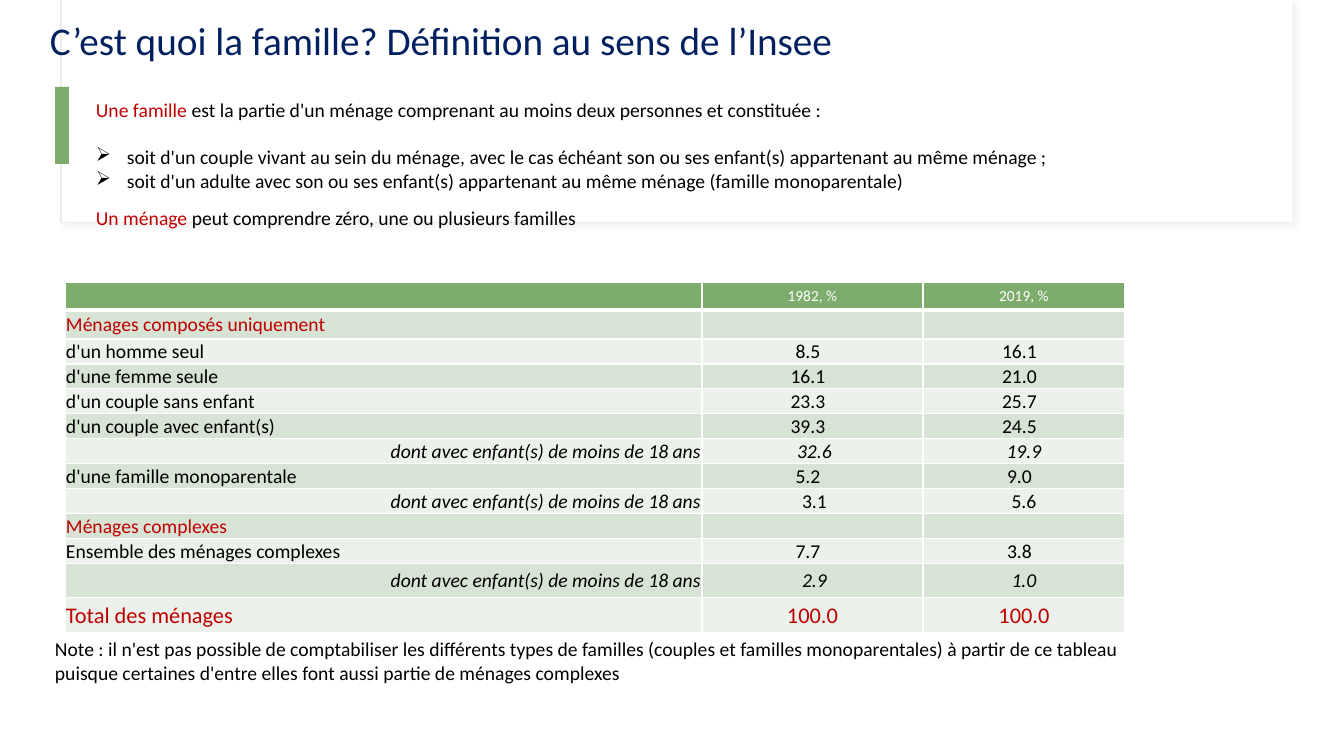
from lxml import etree
from pptx import Presentation
from pptx.dml.color import RGBColor
from pptx.enum.shapes import MSO_SHAPE
from pptx.enum.text import MSO_ANCHOR, PP_ALIGN
from pptx.oxml import parse_xml
from pptx.oxml.ns import nsdecls, qn
from pptx.util import Emu, Pt

RECT = MSO_SHAPE.RECTANGLE
MIDDLE = MSO_ANCHOR.MIDDLE
LEFT, CENTER, RIGHT = PP_ALIGN.LEFT, PP_ALIGN.CENTER, PP_ALIGN.RIGHT
SCALE = 914400 / 100.8  # EMU in one px
FONT = "Calibri"
INK = {
    "white": "FFFFFF", "black": "000000", "navy": "002060", "red": "C00000",
    "green": "7DAC6C", "dark": "D7E3D4", "light": "ECF1EB",
    "edge": "F0EBE4", "shade": "D9D9D9",
}
SUB = "dont avec enfant(s) de moins de 18 ans"
# label, 1982, 2019, style of the row
ROWS = [
    ("", "1982, %", "2019, %", "head"),
    ("Ménages composés uniquement", "", "", "group"),
    ("d'un homme seul", "8.5", "16.1", "main"),
    ("d'une femme seule", "16.1", "21.0", "main"),
    ("d'un couple sans enfant", "23.3", "25.7", "main"),
    ("d'un couple avec enfant(s)", "39.3", "24.5", "main"),
    (SUB, "32.6", "19.9", "sub"),
    ("d'une famille monoparentale", "5.2", "9.0", "main"),
    (SUB, "3.1", "5.6", "plain"),
    ("Ménages complexes", "", "", "group"),
    ("Ensemble des ménages complexes", "7.7", "3.8", "main"),
    (SUB, "2.9", "1.0", "sub"),
    ("Total des ménages", "100.0", "100.0", "total"),
]
TALL = [28, 29] + [25] * 9 + [34, 35]
WIDE = [637, 221, 202]
STYLES = {
    "head": {"size": 11, "color": "white"},
    "group": {"color": "red"},
    "main": {},
    "sub": {"italic": True},
    "plain": {},
    "total": {"size": 16, "color": "red"},
}


def px(n):
    return Emu(round(n * SCALE))


def rgb(name):
    return RGBColor.from_string(INK[name])


def write(para, text, size=14, color="black", italic=False, align=LEFT):
    para.alignment = align
    para.font.size = Pt(size)
    if text:
        run = para.add_run()
        run.text = text
        font = run.font
        font.name, font.size, font.italic = FONT, Pt(size), italic
        font.color.rgb = rgb(color)


def block(slide, box, fill, line=None):
    shape = slide.shapes.add_shape(RECT, *map(px, box))
    shape.shadow.inherit = False
    shape.fill.solid()
    shape.fill.fore_color.rgb = rgb(fill)
    if line:
        shape.line.color.rgb = rgb(line)
        shape.line.width = Pt(0.75)
    else:
        shape.line.fill.background()
    return shape


def frame(slide, box):
    text = slide.shapes.add_textbox(*map(px, box)).text_frame
    text.word_wrap = True
    return text


def panel(slide, box):
    x, y, w, h = box
    # Framed card with a soft shadow
    card = block(slide, box, "white", "edge")
    glow = card._element.spPr.find(qn("a:effectLst"))
    glow.append(parse_xml(
        f'<a:outerShdw {nsdecls("a")} blurRad="50800" dist="38100" dir="2700000">'
        f'<a:srgbClr val="{INK["shade"]}"><a:alpha val="30000"/></a:srgbClr>'
        '</a:outerShdw>'))
    block(slide, (x + 1, y, w - 1, h - 1), "white")
    # Green marker
    block(slide, (x - 6, y + 87, 14, 77), "green")


def bullet(para):
    props = para._p.get_or_add_pPr()
    props.set("marL", str(px(31)))
    props.set("indent", str(px(-31)))
    etree.SubElement(props, qn("a:buFont")).set("typeface", "Wingdings")
    etree.SubElement(props, qn("a:buChar")).set("char", "Ø")


def define(slide, box):
    text = frame(slide, box)
    first = text.paragraphs[0]
    write(first, "Une famille ", color="red")
    write(first, "est la partie d'un ménage comprenant au moins deux personnes et constituée :")
    first.space_after = Pt(17)
    for line in (
        "soit d'un couple vivant au sein du ménage, avec le cas échéant son ou ses enfant(s) appartenant au même ménage ;",
        "soit d'un adulte avec son ou ses enfant(s) appartenant au même ménage (famille monoparentale)",
    ):
        item = text.add_paragraph()
        write(item, line)
        bullet(item)
    last = text.add_paragraph()
    last.space_before = Pt(10)
    write(last, "Un ménage ", color="red")
    write(last, "peut comprendre zéro, une ou plusieurs familles")


def border(cell, base):
    props = cell._tc.get_or_add_tcPr()
    for side, wide in (("L", 1), ("R", 1), ("T", 1), ("B", base)):
        props.append(parse_xml(
            f'<a:ln{side} {nsdecls("a")} w="{Pt(wide)}"><a:solidFill>'
            f'<a:srgbClr val="{INK["white"]}"/></a:solidFill></a:ln{side}>'))


def shares(slide, box):
    grid = slide.shapes.add_table(len(ROWS), len(WIDE), *map(px, box)).table
    grid.first_row = grid.horz_banding = False
    for col, wide in zip(grid.columns, WIDE):
        col.width = px(wide)
    for r, (*texts, kind) in enumerate(ROWS):
        grid.rows[r].height = px(TALL[r])
        band = "green" if kind == "head" else "dark" if r % 2 else "light"
        for c, text in enumerate(texts):
            cell = grid.cell(r, c)
            border(cell, 3 if kind == "head" else 1)
            cell.fill.solid()
            cell.fill.fore_color.rgb = rgb(band)
            cell.vertical_anchor = MIDDLE
            cell.margin_left = cell.margin_right = cell.margin_top = px(1)
            cell.margin_bottom = 0
            look = dict(STYLES[kind])
            if c:
                look["align"] = CENTER
                # Main figures sit a little left of the sub-figures
                if kind == "main":
                    cell.margin_right = px(10)
                elif kind in ("sub", "plain") and c == 1:
                    cell.margin_left = px(5)
            elif text == SUB:
                look.update(align=RIGHT, italic=True)
            if not text:
                look["size"] = 11
            write(cell.text_frame.paragraphs[0], text, **look)


def main():
    deck = Presentation()
    deck.slide_width, deck.slide_height = px(1344), px(756)
    slide = deck.slides.add_slide(deck.slide_layouts[6])
    panel(slide, (61, 0, 1231, 223))
    # Title
    write(frame(slide, (40, 11, 959, 58)).paragraphs[0],
          "C’est quoi la famille? Définition au sens de l’Insee", size=28, color="navy")
    define(slide, (86, 93, 1077, 171))
    shares(slide, (65, 282, sum(WIDE), sum(TALL)))
    # Note
    write(frame(slide, (45, 632, 1149, 58)).paragraphs[0],
          "Note : il n'est pas possible de comptabiliser les différents types de familles "
          "(couples et familles monoparentales) à partir de ce tableau puisque certaines "
          "d'entre elles font aussi partie de ménages complexes")
    deck.save("out.pptx")


if __name__ == "__main__":
    main()
